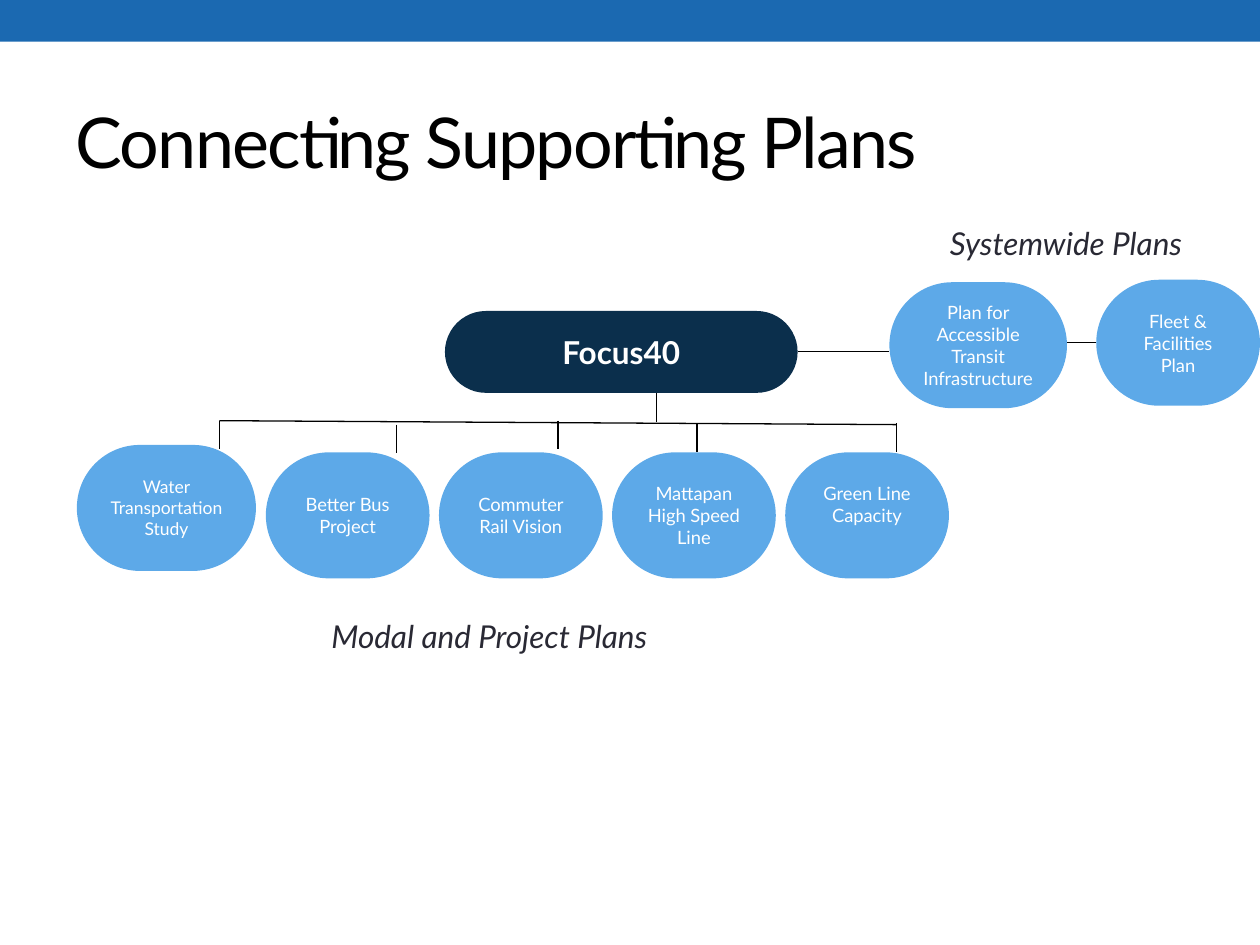
from pptx import Presentation
from pptx import util as u
from pptx.dml.color import RGBColor
from pptx.enum import shapes, text
from pptx.oxml.ns import qn
from lxml import etree

COLORS = {"band": "1B69B1", "hub": "0B2F4C", "plan": "5DA9E8",
          "white": "FFFFFF", "black": "000000", "label": "292934"}


def color(name):
    return RGBColor.from_string(COLORS[name])


def add_box(page, kind, place, fill, words="", **style):
    box = page.shapes.add_shape(kind, *[u.Cm(length) for length in place])
    box.shadow.inherit = False
    box.line.fill.background()
    box.fill.solid()
    box.fill.fore_color.rgb = color(fill)
    if words:
        frame = box.text_frame
        frame.word_wrap = True
        para = frame.paragraphs[0]
        span = para.add_run()
        span.text = words
        span.font.color.rgb = color(style.pop("ink", "white"))
        for name, value in {"name": "Lato", **style}.items():
            setattr(span.font, name, value)
    return box


deck = Presentation()
deck.slide_width, deck.slide_height = u.Cm(25.4), u.Cm(19.05)
page = deck.slides.add_slide(deck.slide_layouts[5])

add_box(page, shapes.MSO_SHAPE.RECTANGLE, (0, 0, 25.4, 0.84), "band")

title = page.shapes.title
place = {"left": 1.27, "top": 1.47, "width": 22.86, "height": 2.74}
for name, value in place.items():
    setattr(title, name, u.Cm(value))
title.text_frame.vertical_anchor = text.MSO_ANCHOR.MIDDLE
para = title.text_frame.paragraphs[0]
para.alignment = text.PP_ALIGN.LEFT
span = para.add_run()
span.text = "Connecting Supporting Plans"
for name, value in {"name": "Lato", "size": u.Pt(40)}.items():
    setattr(span.font, name, value)
span.font.color.rgb = color("black")
span.font._element.set("spc", "-100")

drop = 0.58
drop_starts = [(4.42, 8.48), (8, 8.56), (11.25, 8.48), (14.05, 8.53),
               (18.08, 8.53), (13.23, 7.92)]
lines = [(4.42, 8.48, 18.08, 8.56),
         (16.08, 7.09, 17.93, 7.09),
         (21.51, 6.91, 22.1, 6.91)]
lines += [(x, y, x, y + drop) for x, y in drop_starts]
for ends in lines:
    line = page.shapes.add_connector(
        shapes.MSO_CONNECTOR.STRAIGHT, *[u.Cm(length) for length in ends])
    line.line.color.rgb = color("black")
    line.line.width = u.Pt(0.75)
    etree.SubElement(line._element.spPr, qn("a:effectLst"))

plan_width, plan_height, pitch = 3.3, 2.54, 3.49
plans = [
    ("Focus40", (8.97, 6.27, 7.11, 1.65), "hub", 18),
    ("Water Transportation Study", (1.55, 8.97, 3.61, plan_height), "plan", 10),
    ("Plan for Accessible Transit Infrastructure",
     (17.93, 5.69, 3.58, plan_height), "plan", 10.5),
    ("Fleet & Facilities Plan", (22.1, 5.64, plan_width, plan_height), "plan", 10.5),
]
projects = ["Better Bus Project", "Commuter Rail Vision",
            "Mattapan High Speed Line", "Green Line Capacity"]
for column, name in enumerate(projects):
    place = (5.36 + column * pitch, 9.12, plan_width, plan_height)
    plans.append((name, place, "plan", 10.5))

for words, place, fill, size in plans:
    box = add_box(page, shapes.MSO_SHAPE.ROUNDED_RECTANGLE, place, fill, words,
                  size=u.Pt(size), bold=fill == "hub")
    box.adjustments[0] = 0.5
    frame = box.text_frame
    frame.vertical_anchor = text.MSO_ANCHOR.MIDDLE
    frame.paragraphs[0].alignment = text.PP_ALIGN.CENTER
    for side in ("left", "top", "right", "bottom"):
        setattr(frame, f"margin_{side}", u.Cm(0.25))
    if words == "Green Line Capacity":
        frame.margin_bottom = u.Cm(0.69)

labels = [("Systemwide Plans", (18.9, 4.39, 5.82, 1.02)),
          ("Modal and Project Plans", (6.43, 12.32, 8.15, 1.02))]
for words, place in labels:
    box = add_box(page, shapes.MSO_SHAPE.RECTANGLE, place, "white", words,
                  ink="label", size=u.Pt(18), italic=True)
    box.line.color.rgb = color("white")
    box.line.width = u.Pt(0.75)
    box.text_frame.vertical_anchor = text.MSO_ANCHOR.TOP
    box.text_frame.paragraphs[0].alignment = text.PP_ALIGN.LEFT

deck.save("out.pptx")
